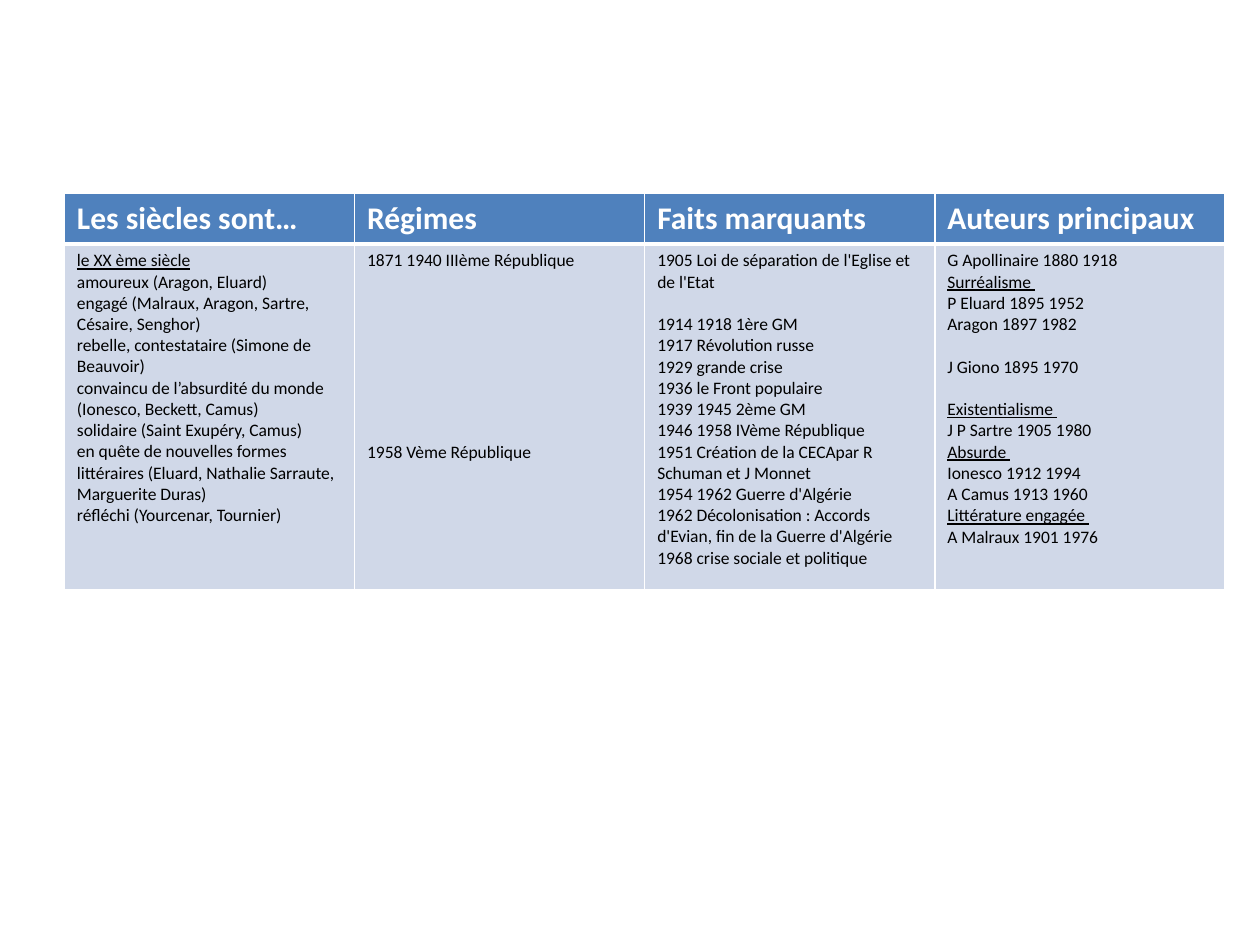
import pptx
import pptx.dml.color
import pptx.oxml
import pptx.oxml.ns
import pptx.util

Pt = pptx.util.Pt
HEADER_HEIGHT = 29.2
LINE_HEIGHT = 12.2
HEADER = {"size": Pt(18), "bold": True, "underline": False, "name": "Calibri"}
BODY = {"size": Pt(10), "bold": False, "underline": False, "name": "Calibri"}
TITLE = {**BODY, "underline": True}

# Each body line is (blank lines above, format, text).
COLUMNS = [
    ("Les siècles sont…", [
        (0, TITLE, "le XX ème siècle"),
        (0, BODY, "amoureux (Aragon, Eluard)"),
        (0, BODY, "engagé (Malraux, Aragon, Sartre, Césaire, Senghor)"),
        (0, BODY, "rebelle, contestataire (Simone de Beauvoir)"),
        (0, BODY, "convaincu de l’absurdité du monde (Ionesco, Beckett, Camus)"),
        (0, BODY, "solidaire (Saint Exupéry, Camus)"),
        (0, BODY, "en quête de nouvelles formes littéraires "
                  "(Eluard, Nathalie Sarraute, Marguerite Duras)"),
        (0, BODY, "réfléchi (Yourcenar, Tournier)"),
    ]),
    ("Régimes", [
        (0, BODY, "1871 1940 IIIème République"),
        (8, BODY, "1958 Vème République"),
    ]),
    ("Faits marquants", [
        (0, BODY, "1905 Loi de séparation de l'Eglise et de l'Etat"),
        (1, BODY, "1914 1918 1ère GM"),
        (0, BODY, "1917 Révolution russe"),
        (0, BODY, "1929 grande crise"),
        (0, BODY, "1936 le Front populaire"),
        (0, BODY, "1939 1945 2ème GM"),
        (0, BODY, "1946 1958 IVème République"),
        (0, BODY, "1951 Création de la CECApar R Schuman et J Monnet"),
        (0, BODY, "1954 1962 Guerre d'Algérie"),
        (0, BODY, "1962 Décolonisation : Accords d'Evian, fin de la Guerre d'Algérie"),
        (0, BODY, "1968 crise sociale et politique"),
    ]),
    ("Auteurs principaux", [
        (0, BODY, "G Apollinaire 1880 1918"),
        (0, TITLE, "Surréalisme "),
        (0, BODY, "P Eluard 1895 1952"),
        (0, BODY, "Aragon 1897 1982"),
        (1, BODY, "J Giono 1895 1970"),
        (1, TITLE, "Existentialisme "),
        (0, BODY, "J P Sartre 1905 1980"),
        (0, TITLE, "Absurde "),
        (0, BODY, "Ionesco 1912 1994"),
        (0, BODY, "A Camus 1913 1960"),
        (0, TITLE, "Littérature engagée "),
        (0, BODY, "A Malraux 1901 1976"),
    ]),
]


def color(value):
    """Return the colour for a hex string."""
    return pptx.dml.color.RGBColor.from_string(value)


def set_borders(cell, widths, value):
    """Draw the cell borders, given a width in points for each side."""
    tc_pr = cell._tc.get_or_add_tcPr()
    for side, width in widths.items():
        tc_pr.append(pptx.oxml.parse_xml(
            f'<a:ln{side} {pptx.oxml.ns.nsdecls("a")} w="{Pt(width)}">'
            f'<a:solidFill><a:srgbClr val="{value}"/></a:solidFill></a:ln{side}>'))


def fill_cell(cell, lines, fill, text_color, top, bottom):
    """Write the lines of a cell and set its fill and borders."""
    set_borders(cell, {"L": 1, "R": 1, "T": top, "B": bottom}, "FFFFFF")
    cell.fill.solid()
    cell.fill.fore_color.rgb = color(fill)
    tf = cell.text_frame
    for i, (gap, style, text) in enumerate(lines):
        p = tf.add_paragraph() if i else tf.paragraphs[0]
        p.space_before = Pt(gap * LINE_HEIGHT)
        r = p.add_run()
        r.text = text
        for name, value in style.items():
            setattr(r.font, name, value)
        r.font.color.rgb = color(text_color)


def add_century_table(slide, left, top, width, height):
    """Place the table of the century in the given box."""
    table = slide.shapes.add_table(
        2, len(COLUMNS), Pt(left), Pt(top), Pt(width), Pt(height)).table
    table.rows[0].height = Pt(HEADER_HEIGHT)
    table.rows[1].height = Pt(height - HEADER_HEIGHT)
    for i, (heading, lines) in enumerate(COLUMNS):
        table.columns[i].width = Pt(width / len(COLUMNS))
        fill_cell(table.cell(0, i), [(0, HEADER, heading)], "4F81BD", "FFFFFF", 1, 3)
        fill_cell(table.cell(1, i), lines, "D0D8E8", "000000", 3, 1)


def main():
    """Build and save the presentation."""
    prs = pptx.Presentation()
    prs.slide_width, prs.slide_height = Pt(720), Pt(540)
    slide = prs.slides.add_slide(prs.slide_layouts[6])
    add_century_table(slide, 36.8, 110.2, 663.2, 227)
    prs.save("out.pptx")


if __name__ == "__main__":
    main()
